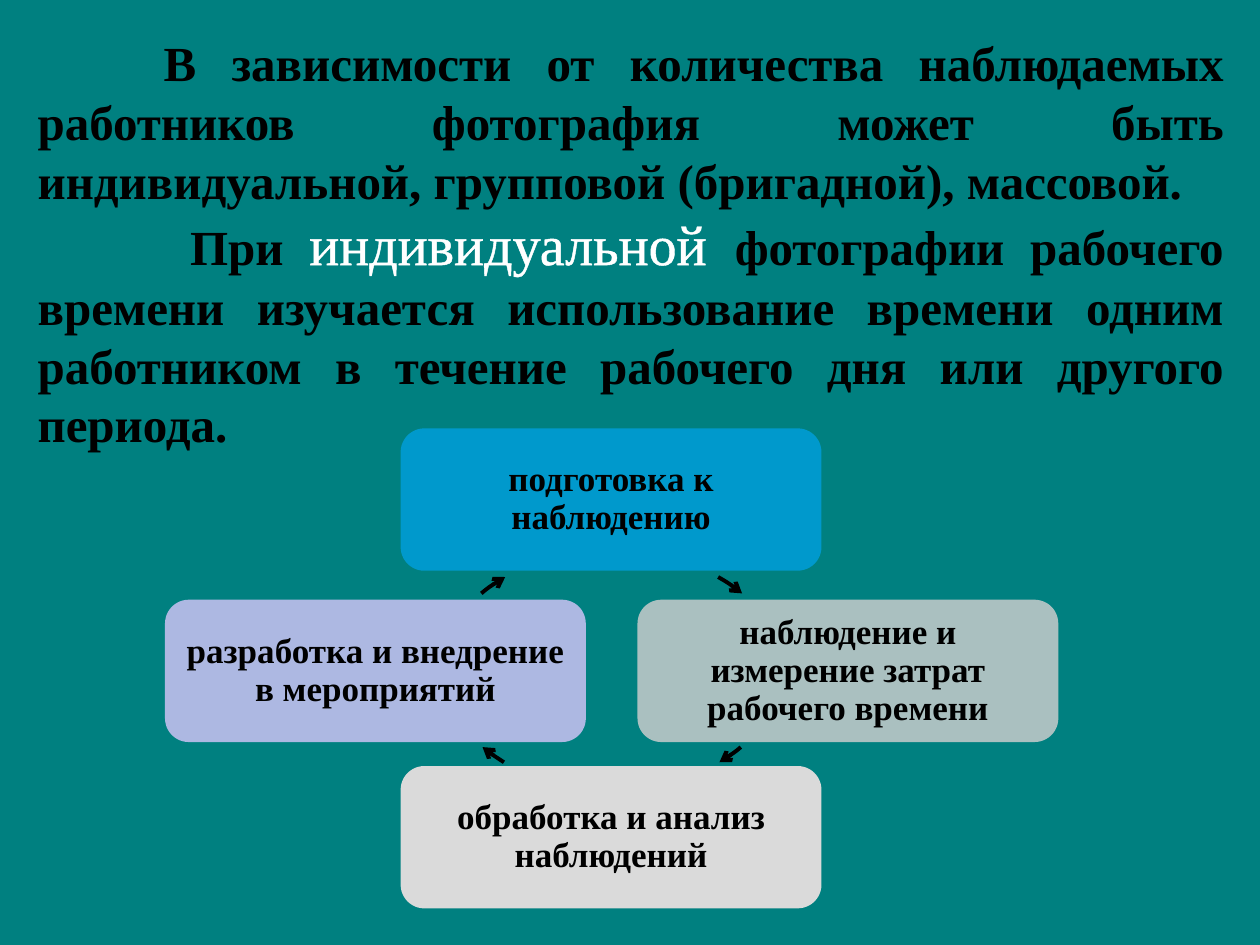
from dataclasses import dataclass

from lxml import etree
from pptx import Presentation
from pptx import util as u
from pptx.dml.color import RGBColor
from pptx.enum import shapes, text
from pptx.oxml.ns import qn

FONT = "Times New Roman"
STAGE_WIDTH, STAGE_HEIGHT = 3.34, 1.13
CYCLE_SIZE = 3.74

Point = tuple[float, float]


@dataclass
class Stage:
    label: str
    left: float
    top: float
    fill: str


@dataclass
class Step:
    corner: Point
    curve: list[Point]


STAGES = [
    Stage("подготовка к наблюдению", 3.18, 3.4, "0099CC"),
    Stage("наблюдение и измерение затрат рабочего времени", 5.06, 4.76, "AAC0C0"),
    Stage("обработка и анализ наблюдений", 3.18, 6.08, "DADADA"),
    Stage("разработка и внедрение в мероприятий", 1.31, 4.76, "ADB8E2"),
]
STEPS = [
    Step((2.83, 4.29), [(5.7, 4.58), (5.77, 4.62), (5.83, 4.66), (5.89, 4.71)]),
    Step((2.84, 2.59), [(5.88, 5.93), (5.82, 5.98), (5.77, 6.01), (5.71, 6.05)]),
    Step((3.12, 2.59), [(4, 6.05), (3.94, 6.01), (3.89, 5.98), (3.83, 5.93)]),
    Step((3.14, 4.29), [(3.82, 4.71), (3.88, 4.66), (3.94, 4.62), (4.01, 4.58)]),
]


def paint(color_format, value: str) -> None:
    color_format.rgb = RGBColor.from_string(value)


def write(paragraph, wording: str, *, size: float = 28, color: str = "000000",
          bold: bool = True, outline: float = 0) -> None:
    run = paragraph.add_run()
    run.text = wording
    run.font.name = FONT
    run.font.size = u.Pt(size)
    run.font.bold = bold
    run.font.fill.solid()
    paint(run.font.fill.fore_color, color)
    if outline:
        line = etree.Element(qn("a:ln"), w=str(u.Pt(outline)))
        solid = etree.SubElement(line, qn("a:solidFill"))
        etree.SubElement(solid, qn("a:srgbClr"), val=color)
        run.font._element.insert(0, line)


def justify(paragraph, first_line: float) -> None:
    paragraph.alignment = text.PP_ALIGN.JUSTIFY
    properties = paragraph._p.get_or_add_pPr()
    properties.set("marL", "0")
    properties.set("indent", str(u.Inches(first_line)))


def draw_introduction(slide) -> None:
    box = slide.shapes.add_textbox(u.Inches(0.2), u.Inches(0.21), u.Inches(9.61), u.Inches(3.47))
    frame = box.text_frame
    frame.word_wrap = True
    frame.auto_size = text.MSO_AUTO_SIZE.SHAPE_TO_FIT_TEXT
    kinds = frame.paragraphs[0]
    justify(kinds, 1)
    write(kinds, "В зависимости от количества наблюдаемых работников фотография "
                 "может быть индивидуальной, групповой (бригадной), массовой.")
    individual = frame.add_paragraph()
    justify(individual, 1.21)
    write(individual, "При ")
    write(individual, "индивидуальной ", size=32, color="FFFFFF", bold=False, outline=1.45)
    write(individual, "фотографии рабочего времени изучается использование времени "
                      "одним работником в течение рабочего дня или другого периода.")


def draw_stage(slide, stage: Stage) -> None:
    card = slide.shapes.add_shape(
        shapes.MSO_SHAPE.ROUNDED_RECTANGLE, u.Inches(stage.left), u.Inches(stage.top),
        u.Inches(STAGE_WIDTH), u.Inches(STAGE_HEIGHT))
    card.shadow.inherit = False
    card.fill.solid()
    paint(card.fill.fore_color, stage.fill)
    card.line.fill.background()
    frame = card.text_frame
    frame.word_wrap = True
    frame.vertical_anchor = text.MSO_ANCHOR.MIDDLE
    frame.margin_left = frame.margin_right = u.Inches(0.08)
    frame.margin_top = frame.margin_bottom = u.Inches(0.08)
    label = frame.paragraphs[0]
    label.alignment = text.PP_ALIGN.CENTER
    label.line_spacing = 0.9
    write(label, stage.label, size=20)


def bend(arc, step: Step) -> None:
    left, top = step.corner
    arc.left, arc.top = u.Inches(left), u.Inches(top)
    arc.width = arc.height = u.Inches(CYCLE_SIZE)
    outline = next(arc._element.iter(qn("a:path")))
    outline.set("w", str(arc.width))
    outline.set("h", str(arc.height))
    points = list(outline.iter(qn("a:pt")))
    for point, (x, y) in zip(points, step.curve):
        point.set("x", str(u.Inches(x - left)))
        point.set("y", str(u.Inches(y - top)))
    for segment in outline.findall(qn("a:lnTo")):
        outline.remove(segment)
    etree.SubElement(outline, qn("a:cubicBezTo")).extend(points[1:])


def draw_step(slide, step: Step) -> None:
    points = [(u.Inches(x), u.Inches(y)) for x, y in step.curve]
    builder = slide.shapes.build_freeform(*points[0])
    builder.add_line_segments(points[1:], close=False)
    arc = builder.convert_to_shape()
    bend(arc, step)
    arc.shadow.inherit = False
    arc.fill.background()
    arc.line.width = u.Pt(2.25)
    arc.line.fill.solid()
    paint(arc.line.fill.fore_color, "000000")
    etree.SubElement(arc._element.spPr.find(qn("a:ln")), qn("a:tailEnd"), type="arrow")


def main() -> None:
    deck = Presentation()
    deck.slide_width, deck.slide_height = u.Inches(10), u.Inches(7.5)
    slide = deck.slides.add_slide(deck.slide_layouts[6])
    slide.background.fill.solid()
    paint(slide.background.fill.fore_color, "008080")
    draw_introduction(slide)
    for stage, step in zip(STAGES, STEPS):
        draw_stage(slide, stage)
        draw_step(slide, step)
    deck.save("out.pptx")


if __name__ == "__main__":
    main()
